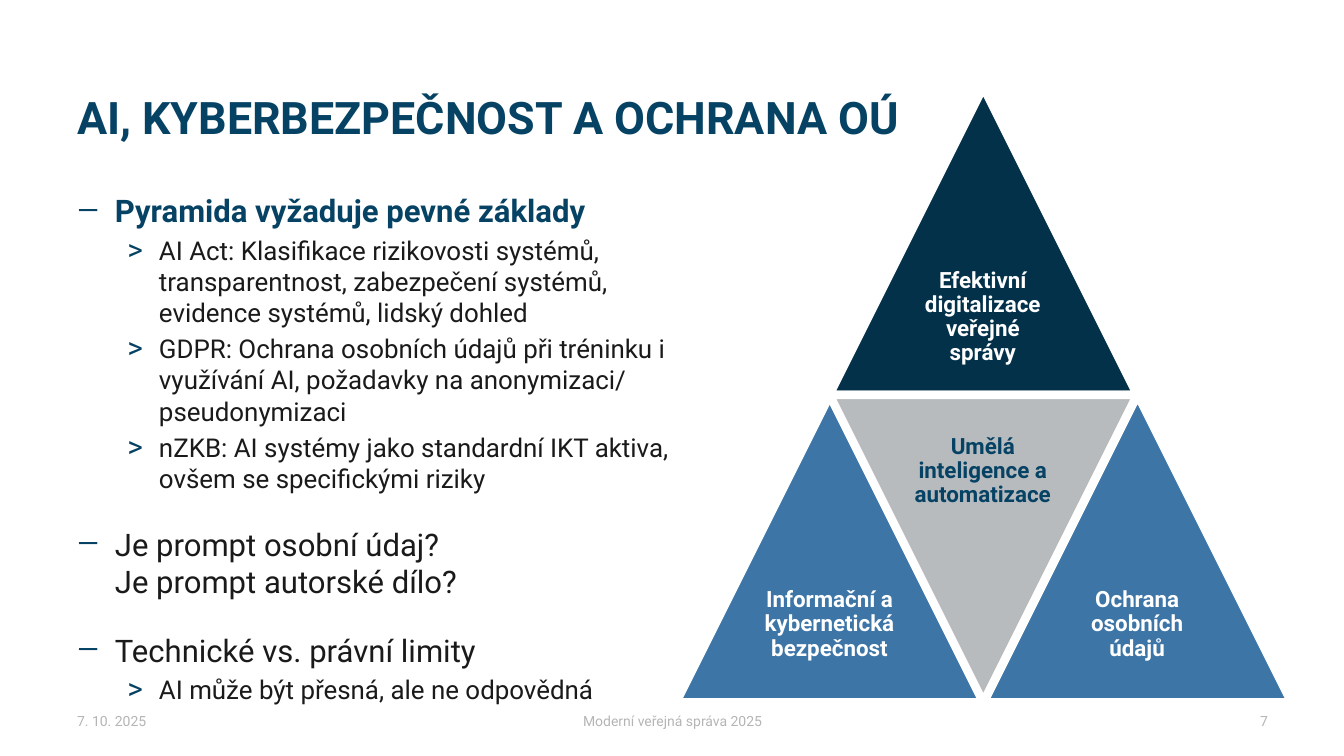
from lxml.etree import SubElement
from pptx import Presentation
from pptx.dml.color import RGBColor
from pptx.enum.shapes import MSO_SHAPE
from pptx.enum.text import MSO_ANCHOR, PP_ALIGN
from pptx.oxml.ns import qn
from pptx.util import Emu, Pt

EMU_PER_PX = 9525
NAVY, DEEP, BLUE, SILVER = "064264", "04314A", "3C75A6", "B7BBBE"
INK, PALE, WHITE = "1A1A1A", "B5B5B5", "FFFFFF"


def px(length):
    return Emu(length * EMU_PER_PX)


def color(hex_code):
    return RGBColor.from_string(hex_code)


class SlideBuilder:
    font_name = "Roboto"

    def __init__(self, slide):
        self.slide = slide

    def style(self, paragraph, size, hex_code, bold=False):
        font = paragraph.font
        font.name, font.size, font.bold = self.font_name, Pt(size), bold
        font.color.rgb = color(hex_code)

    def frame(self, left, top, width, height, anchor=MSO_ANCHOR.TOP):
        frame = self.slide.shapes.add_textbox(
            px(left), px(top), px(width), px(height)).text_frame
        frame.word_wrap = True
        frame.vertical_anchor = anchor
        return frame

    def label(self, box, text, size, hex_code, bold=False,
              align=PP_ALIGN.LEFT, anchor=MSO_ANCHOR.MIDDLE):
        frame = self.frame(*box, anchor)
        paragraph = frame.paragraphs[0]
        paragraph.text = text
        paragraph.alignment = align
        self.style(paragraph, size, hex_code, bold)
        return frame

    def bullet(self, paragraph, char, percent, margin, hanging):
        props = paragraph._p.get_or_add_pPr()
        props.set("marL", str(px(margin)))
        props.set("indent", str(px(-hanging)))
        bullet_color = SubElement(props, qn("a:buClr"))
        SubElement(bullet_color, qn("a:srgbClr"), val=NAVY)
        SubElement(props, qn("a:buSzPct"), val=str(percent * 1000))
        SubElement(props, qn("a:buFont"), typeface=self.font_name)
        SubElement(props, qn("a:buChar"), char=char)

    def outline(self, box, items):
        frame = self.frame(*box)
        for index, (level, text, gap, hex_code, bold) in enumerate(items):
            paragraph = frame.paragraphs[0] if index == 0 else frame.add_paragraph()
            paragraph.text = text
            paragraph.level = level
            if index:
                paragraph.space_before = Pt(gap)
            size, *marker = LEVELS[level]
            self.bullet(paragraph, *marker)
            self.style(paragraph, size, hex_code, bold)

    def triangle(self, left, top, side, fill, text, text_color, flipped=False):
        shape = self.slide.shapes.add_shape(
            MSO_SHAPE.ISOSCELES_TRIANGLE, px(left), px(top), px(side), px(side))
        shape.shadow.inherit = False
        shape.rotation = 180 if flipped else 0
        shape.fill.solid()
        shape.fill.fore_color.rgb = color(fill)
        shape.line.color.rgb = color(WHITE)
        shape.line.width = Pt(6)
        # The caption fills the square inside the wide half
        half = side // 2
        caption_top = top if flipped else top + half
        frame = self.label((left + half // 2, caption_top, half, half), text,
                           16, text_color, True, PP_ALIGN.CENTER)
        frame.margin_left = frame.margin_right = px(7)
        frame.margin_top = frame.margin_bottom = px(7)
        frame.paragraphs[0].line_spacing = 0.9


# Size, bullet sign, bullet percent, margin and hanging indent per level
LEVELS = [(22.2, "—", 90, 36, 36), (18.5, ">", 115, 78, 30)]
NEAR, SUB, SECTION = 4.4, 3.7, 22.5

OUTLINE = [
    (0, "Pyramida vyžaduje pevné základy", NEAR, NAVY, True),
    (1, "AI Act: Klasifikace rizikovosti systémů, transparentnost, "
        "zabezpečení systémů, evidence systémů, lidský dohled", SUB, INK, False),
    (1, "GDPR: Ochrana osobních údajů při tréninku i využívání AI, "
        "požadavky na anonymizaci/ pseudonymizaci", SUB, INK, False),
    (1, "nZKB: AI systémy jako standardní IKT aktiva, "
        "ovšem se specifickými riziky", SUB, INK, False),
    (0, "Je prompt osobní údaj?\vJe prompt autorské dílo?", SECTION, INK, False),
    (0, "Technické vs. právní limity", SECTION, INK, False),
    (1, "AI může být přesná, ale ne odpovědná", SUB, INK, False),
]

FOOTER = [
    (64, 299, "7. 10. 2025", PP_ALIGN.LEFT),
    (438, 405, "Moderní veřejná správa 2025", PP_ALIGN.CENTER),
    (918, 299, "7", PP_ALIGN.RIGHT),
]

# Column in half sides, row, fill, caption, caption colour, flipped
SIDE, PYRAMID_LEFT, PYRAMID_TOP = 293, 644, 83
PYRAMID = [
    (1, 0, DEEP, "Efektivní digitalizace veřejné správy", WHITE, False),
    (0, 1, BLUE, "Informační a kybernetická bezpečnost", WHITE, False),
    (1, 1, SILVER, "Umělá inteligence a automatizace", NAVY, True),
    (2, 1, BLUE, "Ochrana osobních údajů", WHITE, False),
]


def main():
    deck = Presentation()
    deck.slide_width, deck.slide_height = px(1280), px(720)
    builder = SlideBuilder(deck.slides.add_slide(deck.slide_layouts[6]))

    # Title and outline
    builder.outline((64, 178, 598, 490), OUTLINE)
    builder.label((64, 81, 1152, 83), "AI, KYBERBEZPEČNOST A OCHRANA OÚ",
                  32, NAVY, True, anchor=MSO_ANCHOR.TOP)

    # Footer
    for left, width, text, align in FOOTER:
        builder.label((left, 668, width, 37), text, 10, PALE, align=align)

    # Pyramid
    for column, row, *look in PYRAMID:
        left = PYRAMID_LEFT + round(column * SIDE / 2)
        builder.triangle(left, PYRAMID_TOP + row * SIDE, SIDE, *look)

    deck.save("out.pptx")


if __name__ == "__main__":
    main()
